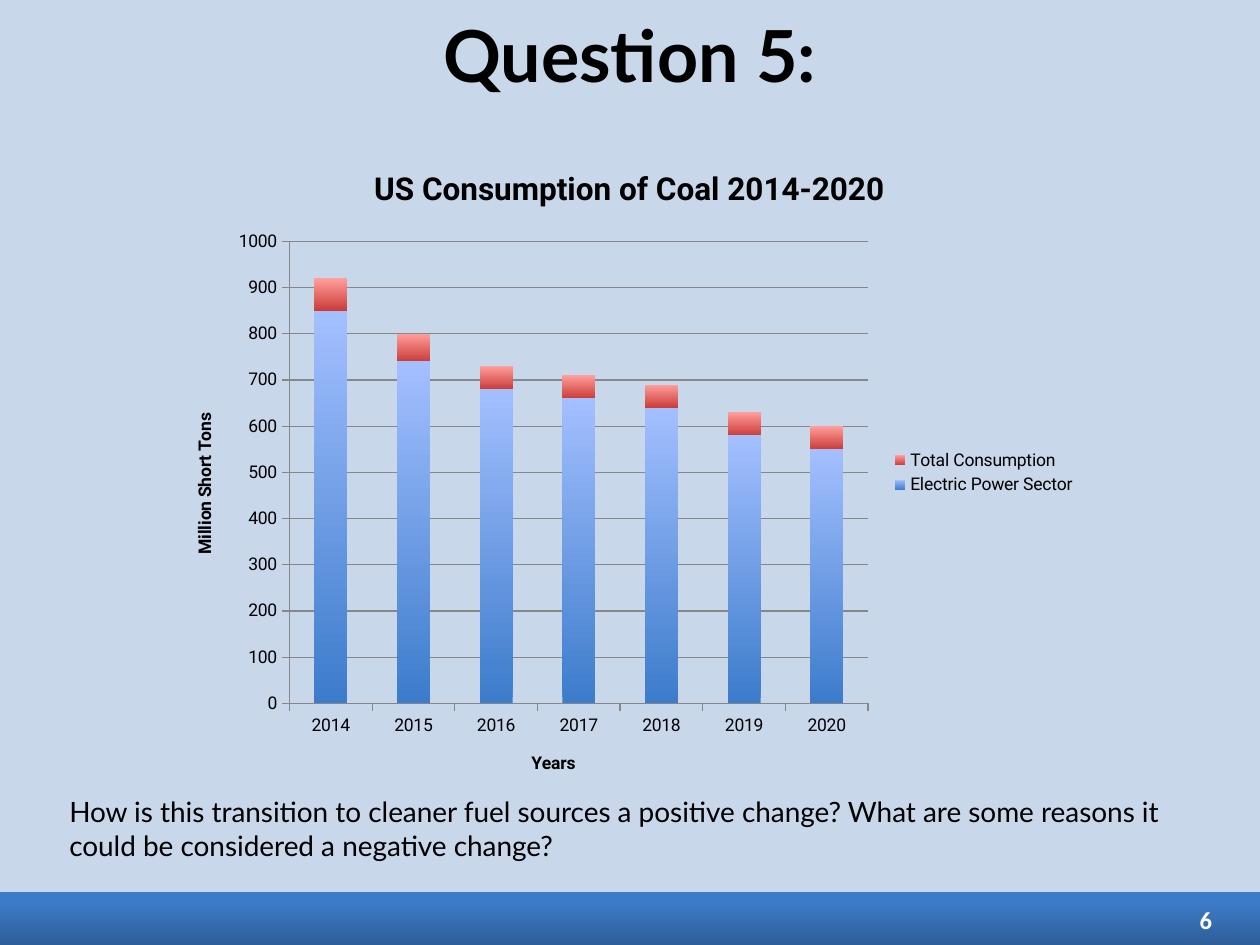
import pptx
import pptx.chart.data
import pptx.dml.color
import pptx.enum.chart
import pptx.enum.shapes
import pptx.enum.text
import pptx.oxml
import pptx.oxml.ns
import pptx.util

Inches = pptx.util.Inches
Pt = pptx.util.Pt
RGBColor = pptx.dml.color.RGBColor
ALIGN = pptx.enum.text.PP_ALIGN
ANCHOR = pptx.enum.text.MSO_ANCHOR

BACKGROUND = RGBColor(0xC8, 0xD7, 0xEA)
BLACK = RGBColor(0, 0, 0)
WHITE = RGBColor(0xFF, 0xFF, 0xFF)
GRID = RGBColor(0x87, 0x87, 0x87)
FOOTER_DARK = RGBColor(0x2E, 0x5E, 0x97)
FOOTER_LIGHT = RGBColor(0x3C, 0x7B, 0xC7)
BLUE_DARK = RGBColor(0x3C, 0x7C, 0xCB)
BLUE_LIGHT = RGBColor(0xA3, 0xBF, 0xFF)
RED_DARK = RGBColor(0xCB, 0x3D, 0x3A)
RED_LIGHT = RGBColor(0xFF, 0x9F, 0x9C)

YEARS = [str(year) for year in range(2014, 2021)]
SERIES = [
    ("Electric Power Sector", [850, 740, 680, 660, 640, 580, 550], BLUE_DARK, BLUE_LIGHT),
    ("Total Consumption", [70, 60, 50, 50, 50, 50, 50], RED_DARK, RED_LIGHT),
]
PLOT_LAYOUT = {"x": 0.13, "y": 0.15, "w": 0.63, "h": 0.7}


def set_attributes(target, values):
    for name, value in values.items():
        setattr(target, name, value)


def set_font(font, size, name, color=BLACK, bold=False):
    set_attributes(font, {"size": Pt(size), "name": name, "bold": bold})
    font.color.rgb = color


def fill_gradient(fill, bottom, top, top_position=1):
    fill.gradient()
    fill.gradient_angle = 90
    for stop, color, position in zip(fill.gradient_stops, (bottom, top), (0, top_position)):
        stop.color.rgb = color
        stop.position = position


def write_text(sp, text, size, name, box, align=ALIGN.LEFT, anchor=ANCHOR.TOP,
               wrap=True, color=BLACK, bold=False):
    set_attributes(sp, dict(zip(("left", "top", "width", "height"), map(Inches, box))))
    tf = sp.text_frame
    margins = ("margin_left", "margin_top", "margin_right", "margin_bottom")
    set_attributes(tf, dict.fromkeys(margins, Inches(0.05)))
    set_attributes(tf, {"word_wrap": wrap, "vertical_anchor": anchor,
                        "auto_size": pptx.enum.text.MSO_AUTO_SIZE.NONE})
    p = tf.paragraphs[0]
    p.alignment = align
    r = p.add_run()
    r.text = text
    set_font(r.font, size, name, color, bold)
    return p


def add_footer(s):
    sp = s.shapes.add_shape(pptx.enum.shapes.MSO_SHAPE.RECTANGLE,
                            Inches(0), Inches(7.08), Inches(10), Inches(0.42))
    sp.shadow.inherit = False
    sp.line.fill.background()
    fill_gradient(sp.fill, FOOTER_DARK, FOOTER_LIGHT, 0.8)


def write_chart_title(owner, text, size):
    tf = (owner.chart_title if hasattr(owner, "chart_title") else owner.axis_title).text_frame
    tf.text = text
    set_font(tf.paragraphs[0].runs[0].font, size, "Roboto", bold=True)


def format_axis(axis, title):
    axis.major_tick_mark = pptx.enum.chart.XL_TICK_MARK.OUTSIDE
    axis.format.line.color.rgb = GRID
    set_font(axis.tick_labels.font, 10, "Roboto")
    write_chart_title(axis, title, 10)


def place_plot(chart):
    qn = pptx.oxml.ns.qn
    plot_area = chart.plots[0]._element.getparent()
    for old in plot_area.findall(qn("c:layout")):
        plot_area.remove(old)
    settings = {"layoutTarget": "inner", "xMode": "edge", "yMode": "edge", **PLOT_LAYOUT}
    parts = "".join(f'<c:{tag} val="{value}"/>' for tag, value in settings.items())
    plot_area.insert(0, pptx.oxml.parse_xml(
        f'<c:layout {pptx.oxml.ns.nsdecls("c")}><c:manualLayout>{parts}</c:manualLayout></c:layout>'))


def add_coal_chart(s):
    data = pptx.chart.data.CategoryChartData()
    data.categories = YEARS
    for name, values, _, _ in SERIES:
        data.add_series(name, values)
    chart = s.shapes.add_chart(pptx.enum.chart.XL_CHART_TYPE.COLUMN_STACKED, Inches(1.35),
                               Inches(1.13), Inches(7.29), Inches(5.24), data).chart
    set_font(chart.font, 10, "Roboto")
    write_chart_title(chart, "US Consumption of Coal 2014-2020", 18)

    plot = chart.plots[0]
    set_attributes(plot, {"gap_width": 150, "overlap": 100, "vary_by_categories": False})
    for series, (_, _, dark, light) in zip(plot.series, SERIES):
        fill_gradient(series.format.fill, dark, light)

    format_axis(chart.category_axis, "Years")
    format_axis(chart.value_axis, "Million Short Tons")
    set_attributes(chart.value_axis, {"minimum_scale": 0, "maximum_scale": 1000,
                                      "major_unit": 100, "has_major_gridlines": True})
    chart.value_axis.major_gridlines.format.line.color.rgb = GRID

    chart.has_legend = True
    set_attributes(chart.legend, {"position": pptx.enum.chart.XL_LEGEND_POSITION.RIGHT,
                                  "include_in_layout": False})
    set_font(chart.legend.font, 10, "Roboto")
    place_plot(chart)


def add_text(s, text, size, name, box, **style):
    sp = s.shapes.add_textbox(*map(Inches, box))
    return write_text(sp, text, size, name, box, **style)


def main():
    prs = pptx.Presentation()
    set_attributes(prs, {"slide_width": Inches(10), "slide_height": Inches(7.5)})
    s = prs.slides.add_slide(prs.slide_layouts[5])
    s.background.fill.solid()
    s.background.fill.fore_color.rgb = BACKGROUND

    add_footer(s)
    write_text(s.shapes.title, "Question 5:", 41, "Lato", (0.5, 0, 9, 0.86),
               align=ALIGN.CENTER, anchor=ANCHOR.MIDDLE, bold=True)
    p = add_text(s, "How is this transition to cleaner fuel sources a positive change? "
                 "What are some reasons it could be considered a negative change?",
                 16, "Lato", (0.5, 6.26, 9, 0.8))
    p.space_before = Pt(6)
    add_text(s, "6", 14, "Calibri", (9.44, 7.14, 0.23, 0.32), align=ALIGN.RIGHT,
             anchor=ANCHOR.MIDDLE, wrap=False, color=WHITE, bold=True)
    add_coal_chart(s)
    prs.save("out.pptx")


if __name__ == "__main__":
    main()
